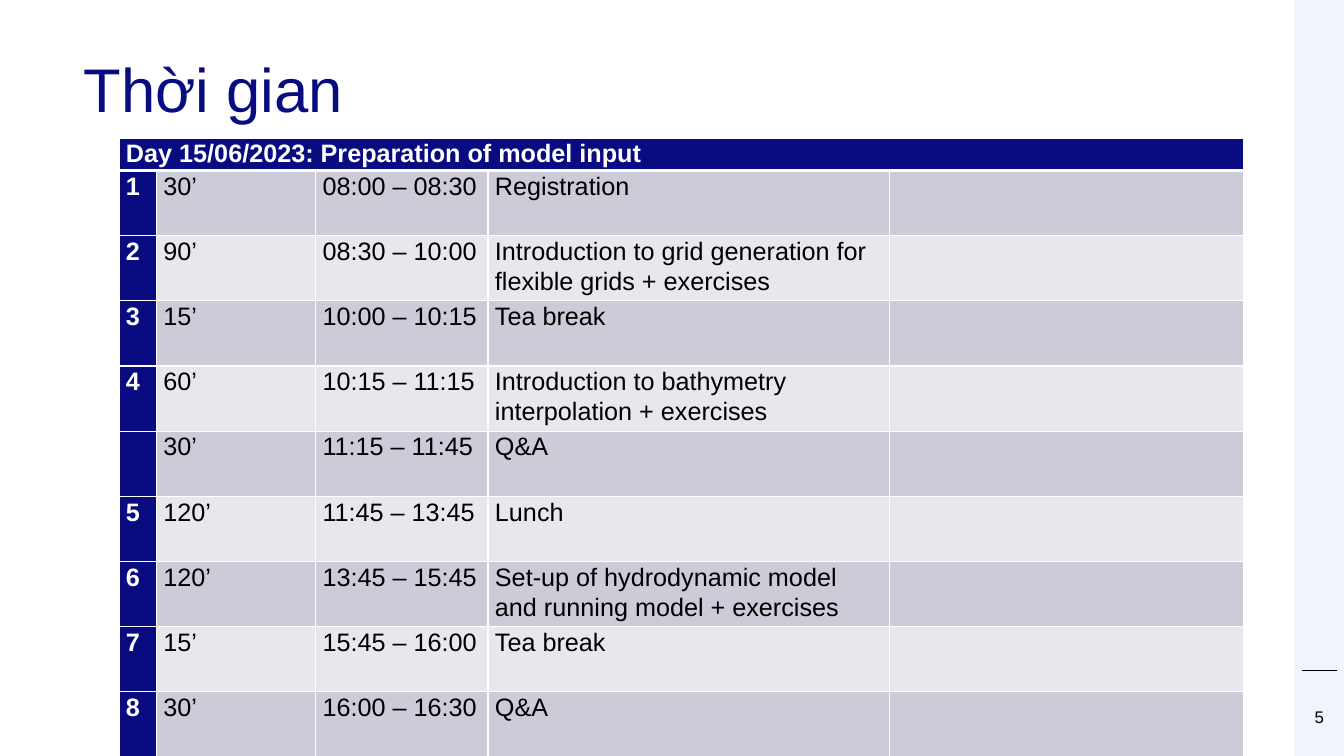
from lxml import etree
from pptx import Presentation
from pptx.dml.color import RGBColor
from pptx.enum.shapes import MSO_CONNECTOR, MSO_SHAPE
from pptx.enum.text import MSO_ANCHOR, PP_ALIGN
from pptx.oxml.ns import qn
from pptx.util import Inches, Pt

RECTANGLE = MSO_SHAPE.RECTANGLE
STRAIGHT = MSO_CONNECTOR.STRAIGHT
TOP = MSO_ANCHOR.TOP
LEFT, CENTER = PP_ALIGN.LEFT, PP_ALIGN.CENTER
TITLE_ONLY = 5
FONT = "Arial"
COLORS = {
    "navy": "080C80",
    "rail": "F1F3FD",
    "dark_band": "CCCCD8",
    "light_band": "E7E7ED",
    "white": "FFFFFF",
    "black": "000000",
}
COLUMN_WIDTHS = [0.37, 1.58, 1.71, 3.98, 3.51]
HEADER_HEIGHT = 0.31
HEADING = "Day 15/06/2023: Preparation of model input\u00a0"
SESSIONS = [
    ("1", "30’", "08:00 – 08:30", "Registration", ""),
    ("2", "90’", "08:30 – 10:00", "Introduction to grid generation for flexible grids + exercises", ""),
    ("3", "15’", "10:00 – 10:15", "Tea break", ""),
    ("4", "60’", "10:15 – 11:15", "Introduction to bathymetry interpolation + exercises", ""),
    ("", "30’", "11:15 – 11:45", "Q&A", ""),
    ("5", "120’", "11:45 – 13:45", "Lunch", ""),
    ("6", "120’", "13:45 – 15:45", "Set-up of hydrodynamic model and running model + exercises", ""),
    ("7", "15’", "15:45 – 16:00", "Tea break", ""),
    ("8", "30’", "16:00 – 16:30", "Q&A", ""),
]


def color(name):
    """Return the named colour."""
    return RGBColor.from_string(COLORS[name])


def write(text_frame, text, size, color_name, bold=False, spacing=1.0, alignment=LEFT):
    """Set and format a single paragraph."""
    text_frame.text = text
    paragraph = text_frame.paragraphs[0]
    paragraph.alignment = alignment
    paragraph.line_spacing = spacing
    font = paragraph.font
    if paragraph.runs:
        font = paragraph.runs[0].font
    font.name, font.size, font.bold = FONT, Pt(size), bold
    font.color.rgb = color(color_name)


def clear_margins(text_frame):
    """Remove the insets and anchor the text at the top."""
    text_frame.margin_left = text_frame.margin_right = 0
    text_frame.margin_top = text_frame.margin_bottom = 0
    text_frame.vertical_anchor = TOP
    text_frame.word_wrap = True


def add_title(slide, left, top, width, height):
    """Place the slide title."""
    title = slide.shapes.title
    title.left, title.top = Inches(left), Inches(top)
    title.width, title.height = Inches(width), Inches(height)
    clear_margins(title.text_frame)
    write(title.text_frame, "Thời gian", 44, "navy", spacing=0.9)


def add_rail(slide, left, top, width, height):
    """Draw the side rail with its rule and page number."""
    rail = slide.shapes.add_shape(
        RECTANGLE, Inches(left), Inches(top), Inches(width), Inches(height))
    rail.shadow.inherit = False
    rail.fill.solid()
    rail.fill.fore_color.rgb = color("rail")
    rail.line.fill.background()

    rule_y = Inches(top + height - 0.85)
    rule = slide.shapes.add_connector(
        STRAIGHT, Inches(left + 0.07), rule_y, Inches(left + width - 0.07), rule_y)
    rule.line.color.rgb = color("black")
    rule.line.width = Pt(0.5)
    etree.SubElement(rule.element.spPr, qn("a:effectLst"))

    number = slide.shapes.add_textbox(
        Inches(left), Inches(top + height - 0.49), Inches(width), Inches(0.2))
    clear_margins(number.text_frame)
    write(number.text_frame, "5", 12, "black", alignment=CENTER)


def set_borders(cell, top_width, bottom_width):
    """Give a cell white borders."""
    properties = cell._tc.get_or_add_tcPr()
    widths = {"a:lnL": 1, "a:lnR": 1, "a:lnT": top_width, "a:lnB": bottom_width}
    for index, (tag, width) in enumerate(widths.items()):
        line = etree.Element(qn(tag), w=str(Pt(width)))
        fill = etree.SubElement(line, qn("a:solidFill"))
        etree.SubElement(fill, qn("a:srgbClr"), val=COLORS["white"])
        properties.insert(index, line)


def style_cell(cell, text, row, column):
    """Fill one schedule cell according to its place."""
    is_label = row == 0 or column == 0
    band = "dark_band" if row % 2 else "light_band"
    cell.margin_left = cell.margin_right = Inches(0.07)
    cell.margin_top = cell.margin_bottom = 0
    cell.fill.solid()
    cell.fill.fore_color.rgb = color("navy" if is_label else band)
    set_borders(cell, 3 if row == 1 else 1, 3 if row == 0 else 1)
    write(cell.text_frame, text, 18, "white" if is_label else "black", is_label, 1.07)


def add_schedule(slide, left, top, width, height):
    """Build the schedule table with equal session rows."""
    rows = [(HEADING, "", "", "", "")] + SESSIONS
    table = slide.shapes.add_table(
        len(rows), len(COLUMN_WIDTHS),
        Inches(left), Inches(top), Inches(width), Inches(height)).table
    for column, column_width in zip(table.columns, COLUMN_WIDTHS):
        column.width = Inches(column_width)
    session_height = (height - HEADER_HEIGHT) / len(SESSIONS)
    for row_index, texts in enumerate(rows):
        table.rows[row_index].height = Inches(session_height if row_index else HEADER_HEIGHT)
        for column_index, text in enumerate(texts):
            style_cell(table.cell(row_index, column_index), text, row_index, column_index)
    table.cell(0, 0).merge(table.cell(0, len(COLUMN_WIDTHS) - 1))


def main():
    """Create and save the presentation."""
    presentation = Presentation()
    presentation.slide_width = Inches(13.33)
    presentation.slide_height = Inches(7.5)
    slide = presentation.slides.add_slide(presentation.slide_layouts[TITLE_ONLY])
    add_rail(slide, 12.84, 0, 0.49, 7.5)
    add_title(slide, 0.83, 0.59, 11.5, 1.02)
    add_schedule(slide, 1.18, 1.37, 11.15, 6.13)
    presentation.save("out.pptx")


if __name__ == "__main__":
    main()
